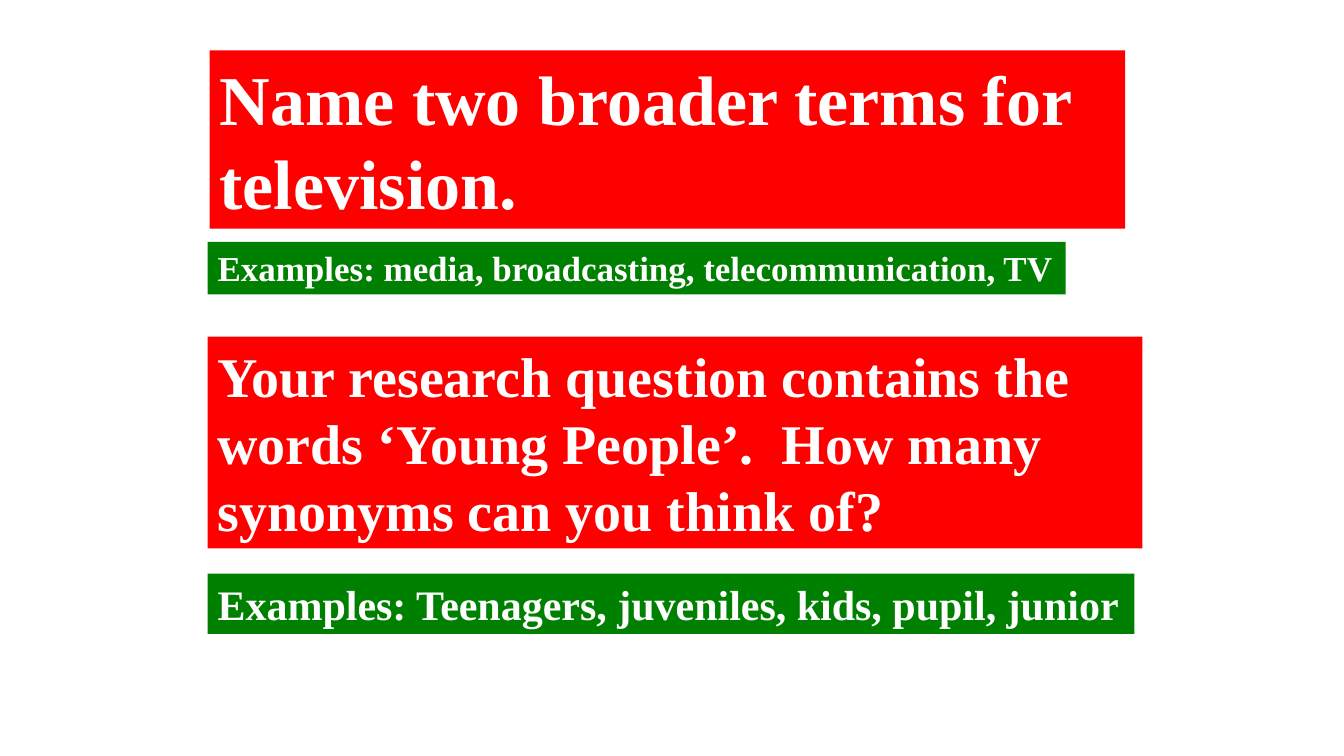
from pptx import Presentation
from pptx.dml.color import RGBColor
from pptx.enum.text import MSO_ANCHOR, MSO_AUTO_SIZE, PP_ALIGN
from pptx.util import Emu, Pt

FIT_SHAPE = MSO_AUTO_SIZE.SHAPE_TO_FIT_TEXT
TOP = MSO_ANCHOR.TOP
LEFT = PP_ALIGN.LEFT

RED = RGBColor(0xFF, 0x00, 0x00)
GREEN = RGBColor(0x00, 0x80, 0x00)
WHITE = RGBColor(0xFF, 0xFF, 0xFF)

EMU_PER_PX = 9144
SLIDE_WIDTH, SLIDE_HEIGHT = 1333, 750
BLANK_LAYOUT = 6


def px(length):
    return Emu(length * EMU_PER_PX)


def write_text(text_frame, text, *, size, font, color, bold=True, wrap=True):
    text_frame.word_wrap = wrap
    text_frame.auto_size = FIT_SHAPE
    text_frame.vertical_anchor = TOP
    paragraph = text_frame.paragraphs[0]
    paragraph.alignment = LEFT
    run = paragraph.add_run()
    run.text = text
    run.font.size = Pt(size)
    run.font.name = font
    run.font.bold = bold
    run.font.color.rgb = color


class QuizSlide:
    """Holds the quiz style and the slide that the panels are drawn on."""

    font = "Times New Roman"
    text_color = WHITE
    question_color = RED
    answer_color = GREEN

    def __init__(self, presentation):
        layout = presentation.slide_layouts[BLANK_LAYOUT]
        self.slide = presentation.slides.add_slide(layout)

    def panel(self, text, box, size, fill, wrap):
        shape = self.slide.shapes.add_textbox(*map(px, box))
        shape.fill.solid()
        shape.fill.fore_color.rgb = fill
        write_text(shape.text_frame, text, size=size, font=self.font,
                   color=self.text_color, wrap=wrap)

    def question(self, text, box, size):
        self.panel(text, box, size, self.question_color, wrap=True)

    def answer(self, text, box, size):
        self.panel(text, box, size, self.answer_color, wrap=False)


def main():
    presentation = Presentation()
    presentation.slide_width = px(SLIDE_WIDTH)
    presentation.slide_height = px(SLIDE_HEIGHT)

    quiz = QuizSlide(presentation)
    quiz.question("Name two broader terms for television.",
                  (208, 50, 908, 177), size=50)
    quiz.answer("Examples: media, broadcasting, telecommunication, TV",
                (206, 240, 851, 52), size=25)
    quiz.question("Your research question contains the words ‘Young People’.  "
                  "How many synonyms can you think of?",
                  (206, 334, 927, 210), size=40)
    quiz.answer("Examples: Teenagers, juveniles, kids, pupil, junior",
                (206, 569, 919, 60), size=30)

    presentation.save("out.pptx")


if __name__ == "__main__":
    main()
